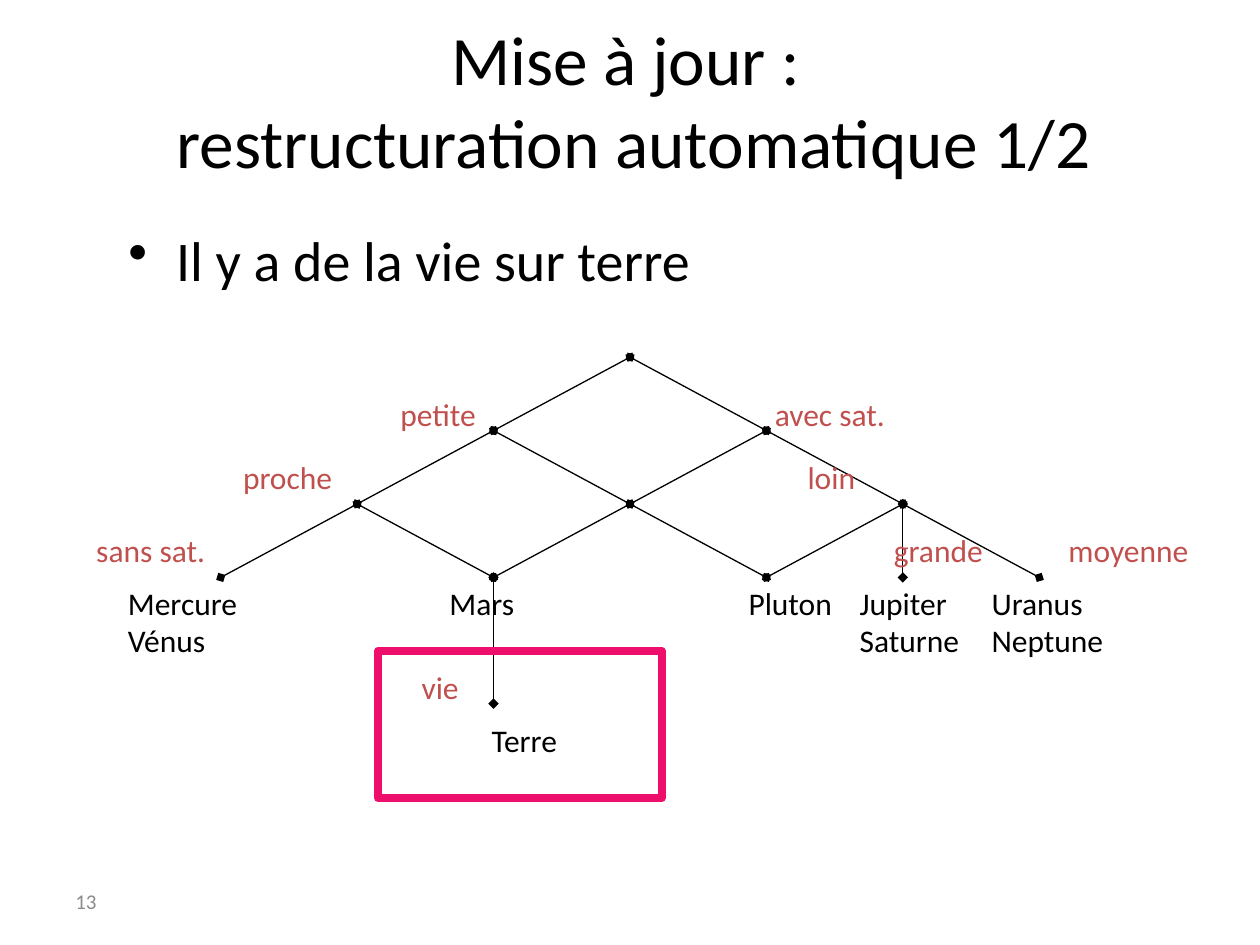
from lxml import etree
from pptx import Presentation
from pptx import util as u
from pptx.dml.color import RGBColor
from pptx.enum import shapes, text
from pptx.oxml.ns import qn

COLOURS = {"ink": "000000", "property": "C0504D", "frame": "EE0F6D", "number": "8C8C8C"}
FONT = "Calibri"

# Lattice grid: node (column, level), in cm
LEFT, TOP = 4.45, 7.2
STEP_X, STEP_Y = 2.75, 1.48
TERRE_LEVEL = 4.72


def node(column, level):
    return LEFT + column * STEP_X, TOP + level * STEP_Y


class Slide:
    def __init__(self, slide):
        self.slide = slide

    def colour(self, name):
        return RGBColor.from_string(COLOURS[name])

    def label(self, lines, left, top, width=3.2, height=1.02, size=18,
              colour="ink", anchor=text.MSO_ANCHOR.TOP, align=None):
        """Add a text box with one paragraph per line; return its paragraphs."""
        box = self.slide.shapes.add_textbox(u.Cm(left), u.Cm(top), u.Cm(width), u.Cm(height))
        frame = box.text_frame
        frame.word_wrap = True
        frame.vertical_anchor = anchor
        frame.text = "\n".join(lines)
        for paragraph in frame.paragraphs:
            paragraph.alignment = align
            paragraph.font.name = FONT
            paragraph.font.size = u.Pt(size)
            paragraph.font.color.rgb = self.colour(colour)
        return frame.paragraphs

    def indent(self, paragraph, left, first=0, bullet=None):
        properties = paragraph._p.get_or_add_pPr()
        properties.set("marL", str(u.Cm(left)))
        properties.set("indent", str(u.Cm(first)))
        if bullet:
            mark = etree.Element(qn("a:buChar"), char=bullet)
            defaults = properties.find(qn("a:defRPr"))
            defaults.addprevious(mark)

    def edge(self, child, parent):
        """Join two lattice nodes with a line that has a diamond at both ends."""
        points = [u.Cm(value) for value in node(*child) + node(*parent)]
        line = self.slide.shapes.add_connector(shapes.MSO_CONNECTOR.STRAIGHT, *points)
        line.line.color.rgb = self.colour("ink")
        line.line.width = u.Pt(0.75)
        outline = line.line._get_or_add_ln()
        for end in ("a:headEnd", "a:tailEnd"):
            etree.SubElement(outline, qn(end), type="diamond")
        etree.SubElement(line._element.spPr, qn("a:effectLst"))

    def frame(self, left, top, width, height):
        box = self.slide.shapes.add_shape(
            shapes.MSO_SHAPE.RECTANGLE, u.Cm(left), u.Cm(top), u.Cm(width), u.Cm(height))
        box.shadow.inherit = False
        box.fill.background()
        box.line.color.rgb = self.colour("frame")
        box.line.width = u.Pt(4.5)


def main():
    deck = Presentation()
    deck.slide_width, deck.slide_height = u.Cm(25.4), u.Cm(19.05)
    page = Slide(deck.slides.add_slide(deck.slide_layouts[6]))

    page.label(["13"], 1.27, 17.65, 5.92, size=12, colour="number",
               anchor=text.MSO_ANCHOR.MIDDLE)
    page.label(["Mise à jour : \vrestructuration automatique 1/2"], 2.92, 0.84, 19.71, 2.34,
               size=39.6, anchor=text.MSO_ANCHOR.MIDDLE, align=text.PP_ALIGN.CENTER)
    fact, = page.label(["Il y a de la vie sur terre"], 2.34, 4.42, 21.16, 2.34, size=32)
    page.indent(fact, 0.96, -0.96, "•")

    # Each level lists (child column, parent column)
    levels = [
        [(2, 3), (4, 3)],
        [(1, 2), (3, 2), (3, 4), (5, 4)],
        [(0, 1), (2, 1), (2, 3), (4, 3), (4, 5), (5, 5), (6, 5)],
    ]
    for level, edges in enumerate(levels, start=1):
        for child, parent in edges:
            page.edge((child, level), (parent, level - 1))
    page.edge((2, TERRE_LEVEL), (2, 3))

    property_rows = {
        7.83: [("petite", 7.82), ("avec sat.", 15.37)],
        9.1: [("proche", 4.65), ("loin", 16.03)],
        10.58: [("sans sat.", 1.69), ("grande", 17.77), ("moyenne", 21.29)],
    }
    for top, properties in property_rows.items():
        for name, left in properties:
            page.label([name], left, top, colour="property")

    planet_groups = [
        (["Mercure", "Vénus"], 2.33),
        (["Mars"], 8.81),
        (["Pluton"], 14.84),
        (["Jupiter", "Saturne"], 17.08),
        (["Uranus", "Neptune"], 19.74),
    ]
    for planets, left in planet_groups:
        page.label(planets, left, 11.64, height=1.8)

    life, earth = page.label(["vie", "Terre"], 8.25, 13.34, 4.24, 2.16)
    life.font.color.rgb = page.colour("property")
    earth.space_before = u.Pt(9)
    page.indent(earth, 1.41)
    page.frame(7.62, 13.12, 5.72, 2.97)

    deck.save("out.pptx")


if __name__ == "__main__":
    main()
